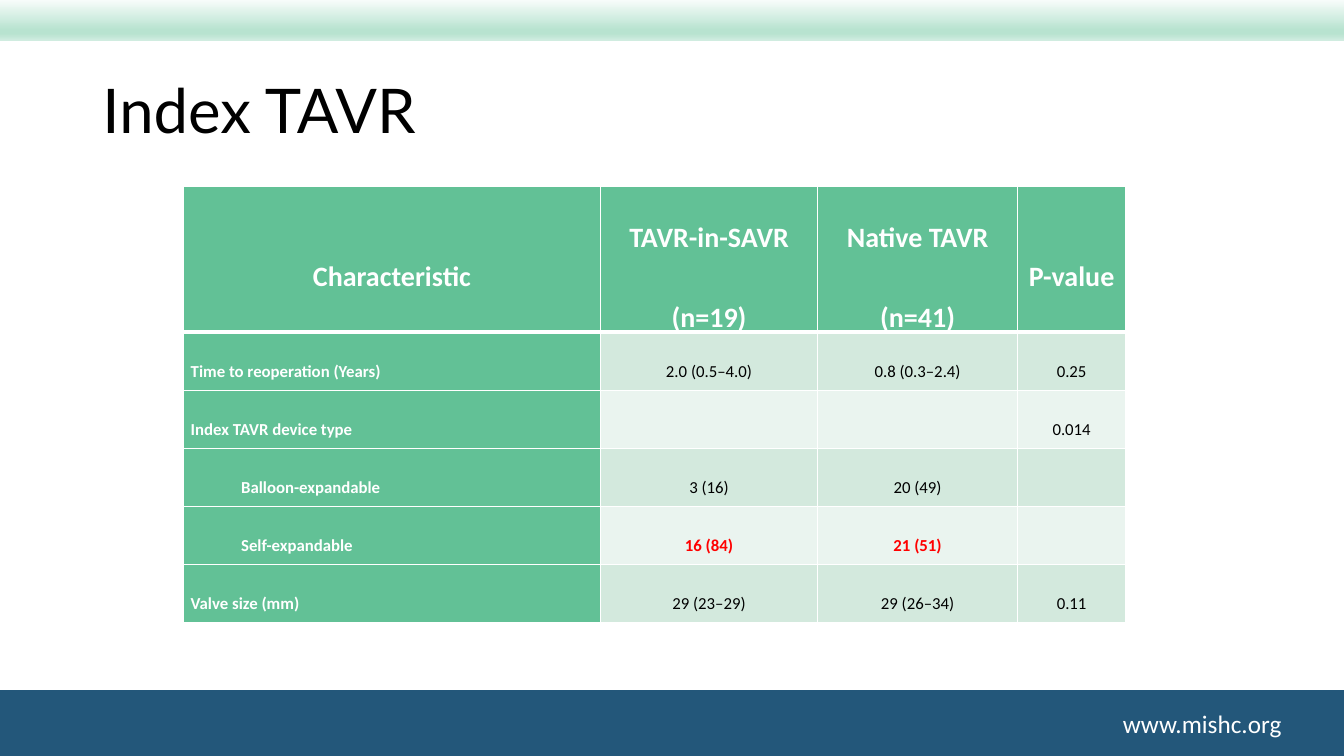
from lxml import etree
from pptx import Presentation
from pptx.dml.color import RGBColor
from pptx.enum import shapes, text
from pptx.oxml import ns
from pptx.util import Pt

COLORS = {
    "navy": "23577A", "green": "62C196", "band_dark": "D3E9DD", "band_light": "EAF4EF",
    "white": "FFFFFF", "black": "000000", "red": "FF0000",
}
FADE = [(0, "F7FCFA"), (74, "B8E3D0"), (83, "B8E3D0"), (100, "D0ECE0")]
COLUMN_WIDTHS = [297.5, 155.5, 142.5, 77.5]
HEADER_HEIGHT, ROW_HEIGHT = 103, 41.5
HEADERS = [["Characteristic"], ["TAVR-in-SAVR", "(n=19)"], ["Native TAVR", "(n=41)"], ["P-value"]]
ROWS = [
    ["Time to reoperation (Years)", "2.0 (0.5–4.0)", "0.8 (0.3–2.4)", "0.25"],
    ["Index TAVR device type", "", "", "0.014"],
    ["Balloon-expandable", "3 (16)", "20 (49)", ""],
    ["Self-expandable", "16 (84)", "21 (51)", ""],
    ["Valve size (mm)", "29 (23–29)", "29 (26–34)", "0.11"],
]
INDENTED = ["Balloon-expandable", "Self-expandable"]
HIGHLIGHTED = ["16 (84)", "21 (51)"]


def rgb(name):
    """Return the named colour."""
    return RGBColor.from_string(COLORS[name])


def add_span(para, words, size, color, font="Calibri", bold=False):
    """Add one formatted run to a paragraph."""
    span = para.add_run()
    span.text = words
    span.font.name, span.font.size, span.font.bold = font, Pt(size), bold
    span.font.color.rgb = rgb(color)


def add_band(page, left, top, width, height):
    """Add a plain rectangle without outline or shadow."""
    band = page.shapes.add_shape(
        shapes.MSO_SHAPE.RECTANGLE, Pt(left), Pt(top), Pt(width), Pt(height))
    band.shadow.inherit = False
    band.line.fill.background()
    return band


def add_top_band(page, left, top, width, height):
    """Add the band that fades from white to green."""
    band = add_band(page, left, top, width, height)
    band.fill.gradient()
    gradient = band.fill._xPr.find(ns.qn("a:gradFill"))
    stops = gradient.find(ns.qn("a:gsLst"))
    for stop in list(stops):
        stops.remove(stop)
    for percent, color in FADE:
        stop = etree.SubElement(stops, ns.qn("a:gs"), pos=str(percent * 1000))
        etree.SubElement(stop, ns.qn("a:srgbClr"), val=color)
    gradient.find(ns.qn("a:lin")).set("ang", "5400000")


def add_footer(page, left, top, width, height):
    """Add the navy band with the web address at its right."""
    band = add_band(page, left, top, width, height)
    band.fill.solid()
    band.fill.fore_color.rgb = rgb("navy")
    box = page.shapes.add_textbox(
        Pt(left + width - 165), Pt(top + 9.5), Pt(129), Pt(29))
    box.text_frame.word_wrap = False
    add_span(box.text_frame.paragraphs[0], "www.mishc.org", 18, "white")


def add_title(page, left, top, width, height):
    """Place and fill the title placeholder."""
    title = page.shapes.title
    title.left, title.top, title.width, title.height = map(Pt, (left, top, width, height))
    frame = title.text_frame
    frame.auto_size = text.MSO_AUTO_SIZE.NONE
    frame.vertical_anchor = text.MSO_ANCHOR.MIDDLE
    para = frame.paragraphs[0]
    para.alignment, para.line_spacing = text.PP_ALIGN.LEFT, 0.9
    add_span(para, "Index TAVR", 44, "black", "Lato")


def style_cell(cell, fill, top_line=1, bottom_line=1):
    """Set a cell's fill, margins and white borders."""
    cell.fill.solid()
    cell.fill.fore_color.rgb = rgb(fill)
    cell.vertical_anchor = text.MSO_ANCHOR.MIDDLE
    cell.margin_left = cell.margin_right = Pt(5)
    cell.margin_top = cell.margin_bottom = Pt(0)
    properties = cell._tc.get_or_add_tcPr()
    sides = {"lnL": 1, "lnR": 1, "lnT": top_line, "lnB": bottom_line}
    for index, (side, weight) in enumerate(sides.items()):
        line = etree.Element(ns.qn("a:" + side), w=str(Pt(weight)))
        solid = etree.SubElement(line, ns.qn("a:solidFill"))
        etree.SubElement(solid, ns.qn("a:srgbClr"), val=COLORS["white"])
        properties.insert(index, line)


def write_cell(cell, lines, size, color, bold, centered=True):
    """Write one paragraph per line with double spacing."""
    frame = cell.text_frame
    for index, words in enumerate(lines):
        para = frame.add_paragraph() if index else frame.paragraphs[0]
        para.alignment = text.PP_ALIGN.CENTER if centered else text.PP_ALIGN.LEFT
        para.line_spacing, para.space_after = 2.0, Pt(8)
        if words in INDENTED:
            para._p.get_or_add_pPr().set("marL", str(Pt(36)))
        add_span(para, words, size, color, bold=bold)


def add_results(page, left, top, width, height):
    """Add the table that compares the two groups."""
    table = page.shapes.add_table(
        len(ROWS) + 1, len(HEADERS), Pt(left), Pt(top), Pt(width), Pt(height)).table
    for column, column_width in zip(table.columns, COLUMN_WIDTHS):
        column.width = Pt(column_width)
    for index, row in enumerate(table.rows):
        row.height = Pt(ROW_HEIGHT if index else HEADER_HEIGHT)
    for column, lines in enumerate(HEADERS):
        cell = table.cell(0, column)
        style_cell(cell, "green", bottom_line=3)
        write_cell(cell, lines, 20, "white", True)
    for row, values in enumerate(ROWS, 1):
        band = "band_dark" if row % 2 else "band_light"
        for column, words in enumerate(values):
            cell = table.cell(row, column)
            style_cell(cell, band if column else "green", top_line=3 if row == 1 else 1)
            if not words:
                continue
            marked = words in HIGHLIGHTED
            color = "white" if not column else "red" if marked else "black"
            write_cell(cell, [words], 12, color, not column or marked, column > 0)


def main():
    """Build and save the slide."""
    deck = Presentation()
    deck.slide_width, deck.slide_height = Pt(960), Pt(540)
    page = deck.slides.add_slide(deck.slide_layouts[5])
    add_footer(page, 0, 493, 960, 47)
    add_top_band(page, 0, 0, 960, 29)
    add_title(page, 66, 28.75, 828, 104.5)
    add_results(page, 131.25, 133.25, sum(COLUMN_WIDTHS), HEADER_HEIGHT + ROW_HEIGHT * len(ROWS))
    deck.save("out.pptx")


if __name__ == "__main__":
    main()
